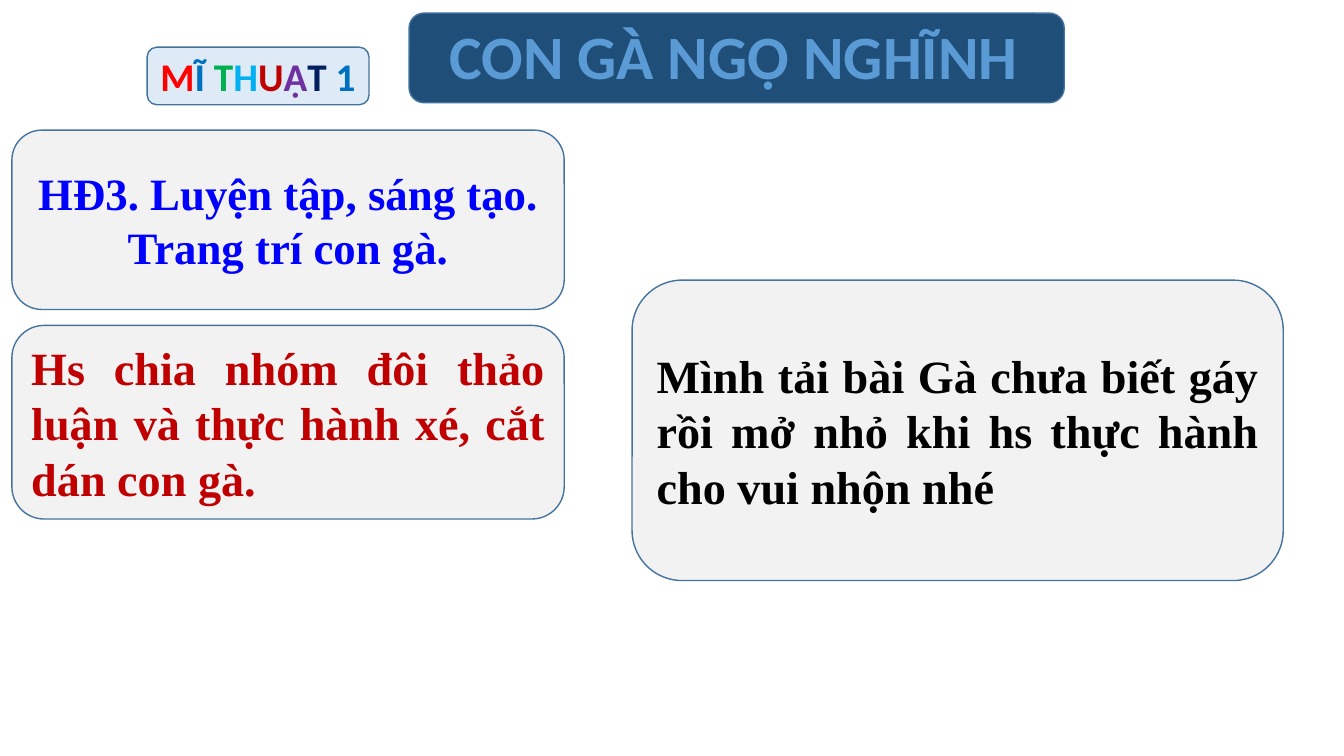
import pptx
import pptx.util
import pptx.dml.color
import pptx.enum.shapes
import pptx.enum.text

Cm = pptx.util.Cm
RGBColor = pptx.dml.color.RGBColor
Align = pptx.enum.text.PP_ALIGN
Anchor = pptx.enum.text.MSO_ANCHOR

NAVY = RGBColor(0x1F, 0x4E, 0x79)
EDGE = RGBColor(0x43, 0x73, 0x9E)
SKY = RGBColor(0x5B, 0x9B, 0xD5)
PALE = RGBColor(0xDE, 0xEB, 0xF7)
GREY = RGBColor(0xF2, 0xF2, 0xF2)
BLACK = RGBColor(0x00, 0x00, 0x00)
BLUE = RGBColor(0x00, 0x00, 0xFF)
RED = RGBColor(0xFF, 0x00, 0x00)
CRIMSON = RGBColor(0xC0, 0x00, 0x00)
AZURE = RGBColor(0x00, 0x70, 0xC0)
GREEN = RGBColor(0x00, 0xB0, 0x50)
CYAN = RGBColor(0x00, 0xB0, 0xF0)
PURPLE = RGBColor(0x70, 0x30, 0xA0)
INK = RGBColor(0x00, 0x20, 0x60)


def write(frame, runs, size, font, align=Align.CENTER, anchor=Anchor.TOP):
    """Fill a text frame with one paragraph of (text, colour) runs."""
    frame.word_wrap = True
    frame.auto_size = pptx.enum.text.MSO_AUTO_SIZE.NONE
    frame.vertical_anchor = anchor
    para = frame.paragraphs[0]
    para.alignment = align
    for text, color in runs:
        run = para.add_run()
        run.text = text
        run.font.size = pptx.util.Pt(size)
        run.font.name = font
        run.font.bold = True
        run.font.color.rgb = color


class Board:
    head = "Calibri"
    body = "Times New Roman"

    def __init__(self, slide):
        self.slide = slide
        self.shapes = slide.shapes

    def panel(self, box, fill):
        kind = pptx.enum.shapes.MSO_SHAPE.ROUNDED_RECTANGLE
        shape = self.shapes.add_shape(kind, *map(Cm, box))
        shape.shadow.inherit = False
        shape.fill.solid()
        shape.fill.fore_color.rgb = fill
        shape.line.color.rgb = EDGE
        shape.line.width = pptx.util.Pt(1)
        return shape

    def card(self, box, text, color, size, align):
        shape = self.panel(box, GREY)
        write(shape.text_frame, [(text, color)], size, self.body,
              align=align, anchor=Anchor.MIDDLE)

    def label(self, box, runs, size):
        text = self.shapes.add_textbox(*map(Cm, box))
        write(text.text_frame, runs, size, self.head)

    def title(self, box, text, color, size):
        title = self.shapes.title
        title.left, title.top, title.width, title.height = map(Cm, box)
        write(title.text_frame, [(text, color)], size, self.head)
        # Bring the title in front of its banner
        self.shapes._spTree.append(title._element)


def main():
    deck = pptx.Presentation()
    deck.slide_width, deck.slide_height = Cm(33.87), Cm(19.05)
    board = Board(deck.slides.add_slide(deck.slide_layouts[5]))

    # Subject badge
    board.panel((3.71, 1.19, 5.59, 1.45), PALE)
    board.label((3.3, 1.19, 6.4, 1.45), [
        ("M", RED), ("Ĩ ", AZURE), ("T", GREEN), ("H", CYAN),
        ("U", CRIMSON), ("Ậ", PURPLE), ("T ", INK), ("1", AZURE)], 28)

    # Title banner
    board.panel((10.31, 0.33, 16.51, 2.26), NAVY)
    board.title((10.24, 0.33, 16.51, 2.13), "CON GÀ NGỘ NGHĨNH", SKY, 44)

    # Activity cards
    board.card((0.3, 3.28, 13.92, 4.52),
               "HĐ3. Luyện tập, sáng tạo. Trang trí con gà.",
               BLUE, 32, Align.CENTER)
    board.card((0.3, 8.2, 13.92, 4.88),
               "Hs chia nhóm đôi thảo luận và thực hành xé, cắt dán con gà.",
               CRIMSON, 33, Align.JUSTIFY)

    # Music note
    board.card((15.93, 7.06, 16.41, 7.57),
               "Mình tải bài Gà chưa biết gáy rồi mở nhỏ khi hs thực hành "
               "cho vui nhộn nhé", BLACK, 33, Align.JUSTIFY)

    deck.save("out.pptx")


if __name__ == "__main__":
    main()
